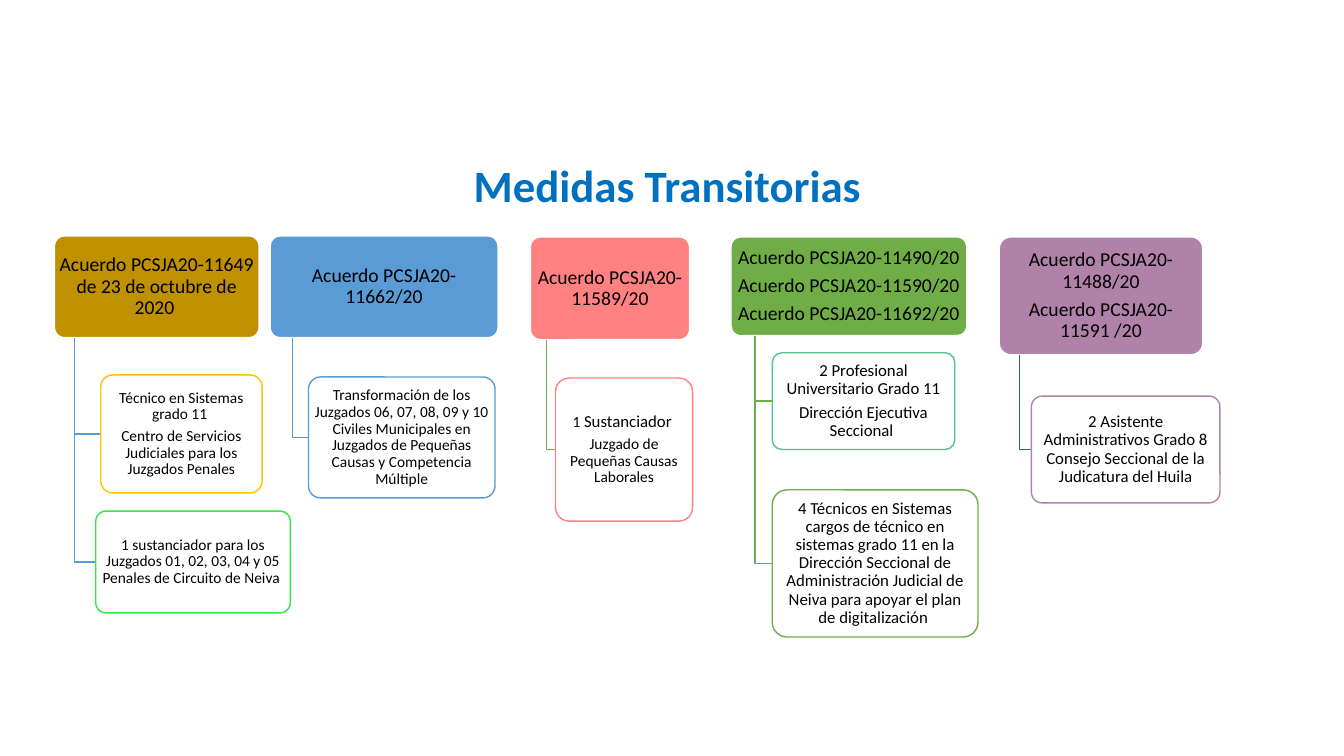
from dataclasses import dataclass

from pptx import Presentation
from pptx.dml.color import RGBColor
from pptx.enum.shapes import MSO_SHAPE
from pptx.enum.text import MSO_ANCHOR, PP_ALIGN
from pptx.slide import Slide
from pptx.text.text import TextFrame
from pptx.util import Inches, Pt

FONT = "Calibri"
INK = {
    "black": "000000", "white": "FFFFFF", "title": "0070C0",
    "ochre": "BF9000", "gold": "FFC000", "lime": "30E845",
    "blue": "5B9BD5", "navy": "365B9D", "coral": "FF8181",
    "green": "70AD47", "mint": "4DC58D", "mauve": "B082A9",
}


@dataclass(frozen=True)
class Run:
    text: str
    size: int


@dataclass(frozen=True)
class Box:
    left: float
    top: float
    width: float
    height: float
    color: str
    paras: list[list[Run]]


@dataclass(frozen=True)
class Branch:
    """A heading box, the trunk below it and the boxes hung from the trunk."""
    head: Box
    trunk: float
    line: str
    items: list[Box]


def paras(size: int, *texts: str) -> list[list[Run]]:
    return [[Run(text, size)] for text in texts]


BRANCHES = [
    Branch(
        Box(0.54, 2.34, 2.03, 1.01, "ochre",
            paras(14, "Acuerdo PCSJA20-11649 de 23 de octubre de 2020 ")),
        0.74, "blue",
        [Box(1, 3.72, 1.6, 1.17, "gold",
             paras(11, "Técnico en Sistemas grado 11 ",
                   "Centro de Servicios Judiciales para los Juzgados Penales")),
         Box(0.95, 5.07, 1.93, 1.01, "lime",
             paras(11, "1 sustanciador para los Juzgados 01, 02, 03, 04 y 05 "
                       "Penales de Circuito de Neiva "))]),
    Branch(
        Box(2.68, 2.34, 2.26, 1.01, "blue",
            paras(14, "Acuerdo PCSJA20-11662/20")),
        2.9, "blue",
        [Box(3.06, 3.74, 1.85, 1.2, "blue",
             paras(11, "Transformación de los Juzgados 06, 07, 08, 09 y 10 "
                       "Civiles Municipales en Juzgados de Pequeñas Causas y "
                       "Competencia Múltiple"))]),
    Branch(
        Box(5.26, 2.35, 1.58, 1.02, "coral",
            paras(14, "Acuerdo PCSJA20-11589/20")),
        5.42, "green",
        [Box(5.51, 3.75, 1.36, 1.42, "coral",
             [[Run("1 ", 11), Run("Sustanciador", 12), Run(" ", 11)],
              [Run("Juzgado de Pequeñas Causas Laborales", 11)]])]),
    Branch(
        Box(7.25, 2.35, 2.34, 0.98, "green",
            paras(14, "Acuerdo PCSJA20-11490/20", "Acuerdo PCSJA20-11590/20 ",
                  "Acuerdo PCSJA20-11692/20")),
        7.49, "green",
        [Box(7.66, 3.5, 1.81, 0.96, "mint",
             paras(12, "2 Profesional Universitario Grado 11",
                   "Dirección Ejecutiva Seccional ")),
         Box(7.66, 4.86, 2.04, 1.46, "green",
             paras(12, "4 Técnicos en Sistemas cargos de técnico en sistemas "
                       "grado 11 en la Dirección Seccional de Administración "
                       "Judicial de Neiva para apoyar el plan de "
                       "digitalización "))]),
    Branch(
        Box(9.91, 2.35, 2.02, 1.17, "mauve",
            paras(14, "Acuerdo PCSJA20-11488/20", "Acuerdo PCSJA20-11591 /20")),
        10.11, "navy",
        [Box(10.23, 3.93, 1.87, 1.06, "mauve",
             paras(12, "2 Asistente Administrativos Grado 8 Consejo Seccional "
                       "de la Judicatura del Huila"))]),
]


def tint(name: str) -> RGBColor:
    return RGBColor.from_string(INK[name])


def write(frame: TextFrame, lines: list[list[Run]]) -> None:
    frame.word_wrap = True
    frame.vertical_anchor = MSO_ANCHOR.MIDDLE
    frame.margin_left = frame.margin_right = Inches(0.02)
    frame.margin_top = frame.margin_bottom = Inches(0.02)
    for i, line in enumerate(lines):
        para = frame.add_paragraph() if i else frame.paragraphs[0]
        para.alignment = PP_ALIGN.CENTER
        para.line_spacing = 0.9
        para.space_after = Pt(round(0.35 * line[0].size, 1))
        for part in line:
            run = para.add_run()
            run.text = part.text
            run.font.name = FONT
            run.font.size = Pt(part.size)
            run.font.color.rgb = tint("black")


def draw_box(slide: Slide, box: Box, fill: str, edge: str) -> None:
    shape = slide.shapes.add_shape(
        MSO_SHAPE.ROUNDED_RECTANGLE, Inches(box.left), Inches(box.top),
        Inches(box.width), Inches(box.height))
    shape.adjustments[0] = 0.1
    shape.shadow.inherit = False
    shape.fill.solid()
    shape.fill.fore_color.rgb = tint(fill)
    shape.line.color.rgb = tint(edge)
    shape.line.width = Pt(1)
    write(shape.text_frame, box.paras)


def draw_elbow(slide: Slide, branch: Branch, item: Box) -> None:
    """Run down the trunk, then across to the middle of the item's left side."""
    trunk = Inches(branch.trunk)
    start = Inches(branch.head.top + branch.head.height)
    mid = Inches(item.top + item.height / 2)
    pen = slide.shapes.build_freeform(trunk, start)
    pen.add_line_segments([(trunk, mid), (Inches(item.left), mid)], close=False)
    elbow = pen.convert_to_shape()
    elbow.shadow.inherit = False
    elbow.fill.background()
    elbow.line.color.rgb = tint(branch.line)
    elbow.line.width = Pt(1)


def draw_title(slide: Slide) -> None:
    title = slide.shapes.title
    title.left, title.top = Inches(4.36), Inches(1.51)
    title.width, title.height = Inches(4.62), Inches(0.64)
    title.text_frame.vertical_anchor = MSO_ANCHOR.TOP
    para = title.text_frame.paragraphs[0]
    para.alignment = PP_ALIGN.CENTER
    run = para.add_run()
    run.text = "Medidas Transitorias "
    run.font.name = FONT
    run.font.size = Pt(32)
    run.font.bold = True
    run.font.color.rgb = tint("title")


def main() -> None:
    deck = Presentation()
    deck.slide_width, deck.slide_height = Inches(13.33), Inches(7.5)
    slide = deck.slides.add_slide(deck.slide_layouts[5])
    draw_title(slide)
    for branch in BRANCHES:
        draw_box(slide, branch.head, branch.head.color, "white")
        for item in branch.items:
            draw_elbow(slide, branch, item)
            draw_box(slide, item, "white", item.color)
    deck.save("out.pptx")


if __name__ == "__main__":
    main()
